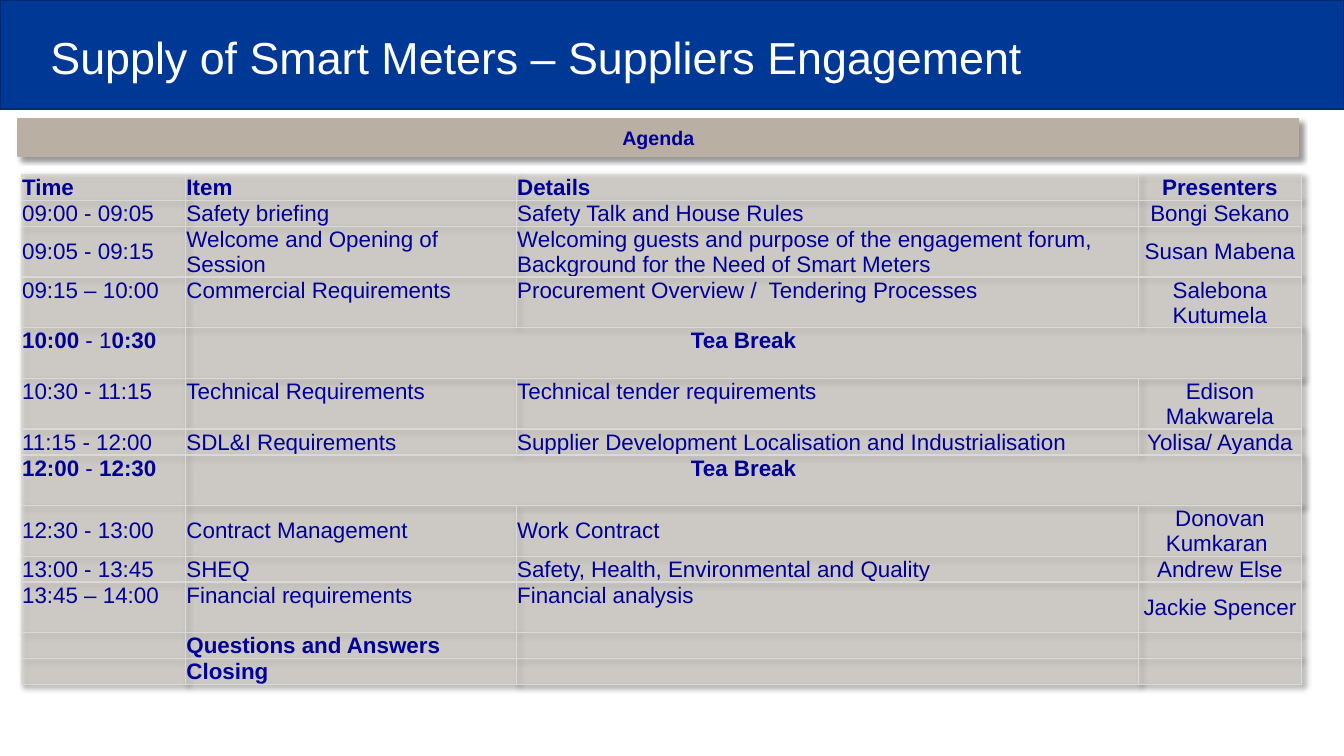
from lxml import etree
from pptx import Presentation
from pptx.dml.color import RGBColor
from pptx.enum.shapes import MSO_SHAPE
from pptx.enum.text import MSO_ANCHOR, PP_ALIGN
from pptx.oxml.ns import qn
from pptx.util import Inches, Pt

LEFT, CENTER = PP_ALIGN.LEFT, PP_ALIGN.CENTER
TOP, MIDDLE, BOTTOM = MSO_ANCHOR.TOP, MSO_ANCHOR.MIDDLE, MSO_ANCHOR.BOTTOM
RECTANGLE = MSO_SHAPE.RECTANGLE

FONT = "Arial"
NAVY, WHITE, SAND, GRID = "000099", "FFFFFF", "D4CEC6", "D9D9D9"
TITLE = "Supply of Smart Meters – Suppliers Engagement"
COLUMN_WIDTHS = [1.63, 3.28, 6.17, 1.62]
LINE_HEIGHT = 0.25

# Each row: lines of height, anchor of the first three columns, cell texts (*bold*)
AGENDA = [
    (1, BOTTOM, ["*Time*", "*Item*", "*Details*", "*Presenters*"]),
    (1, MIDDLE, ["09:00 - 09:05", "Safety briefing", "Safety Talk and House Rules", "Bongi Sekano"]),
    (2, MIDDLE, ["09:05 - 09:15", "Welcome and Opening of Session",
                 "Welcoming guests and purpose of the engagement forum, "
                 "Background for the Need of Smart Meters", "Susan Mabena"]),
    (2, TOP, ["09:15 – 10:00", "Commercial Requirements",
              "Procurement Overview /  Tendering Processes", "Salebona Kutumela"]),
    (2, TOP, ["*10:00* - 1*0:30*", "*Tea Break*"]),
    (2, TOP, ["10:30 - 11:15", "Technical Requirements", "Technical tender requirements", "Edison Makwarela"]),
    (1, MIDDLE, ["11:15 - 12:00", "SDL&I Requirements",
                 "Supplier Development Localisation and Industrialisation", "Yolisa/ Ayanda"]),
    (2, TOP, ["*12:00* - *12:30*", "*Tea Break*"]),
    (2, MIDDLE, ["12:30 - 13:00", "Contract Management", "Work Contract", "Donovan Kumkaran "]),
    (1, MIDDLE, ["13:00 - 13:45", "SHEQ", "Safety, Health, Environmental and Quality", "Andrew Else"]),
    (2, TOP, ["13:45 – 14:00", "Financial requirements", "Financial analysis", "Jackie Spencer"]),
    (1, MIDDLE, ["", "*Questions and Answers*", "", ""]),
    (1, MIDDLE, ["", "*Closing*", "", ""]),
]


def rgb(color):
    """Turn a hex string into a colour."""
    return RGBColor.from_string(color)


def style(paragraph, size, color, align):
    """Set the font and alignment of a paragraph."""
    paragraph.alignment = align
    paragraph.font.name = FONT
    paragraph.font.size = Pt(size)
    paragraph.font.color.rgb = rgb(color)


def color_element(parent, color, alpha=100):
    """Add a colour with opacity in percent."""
    element = etree.SubElement(parent, qn("a:srgbClr"), val=color)
    etree.SubElement(element, qn("a:alpha"), val=str(alpha * 1000))


def soft_shadow():
    """Make an effect list with a shadow to the lower right."""
    effects = etree.Element(qn("a:effectLst"))
    shadow = etree.SubElement(effects, qn("a:outerShdw"), blurRad=str(Pt(4)), dist=str(Pt(3)),
                              dir="2700000", algn="tl", rotWithShape="0")
    color_element(shadow, "000000", 40)
    return effects


def add_bar(slide, box, fill, line):
    """Add a filled rectangle."""
    bar = slide.shapes.add_shape(RECTANGLE, *map(Inches, box))
    bar.shadow.inherit = False
    bar.fill.solid()
    bar.fill.fore_color.rgb = rgb(fill)
    bar.line.color.rgb = rgb(line)
    bar.line.width = Pt(1)
    return bar


def format_cell(cell):
    """Give a cell its borders, translucent fill and margins."""
    properties = cell._tc.get_or_add_tcPr()
    for side in ("lnL", "lnR", "lnT", "lnB"):
        border = etree.SubElement(properties, qn(f"a:{side}"), w=str(Pt(1)))
        color_element(etree.SubElement(border, qn("a:solidFill")), GRID)
    color_element(etree.SubElement(properties, qn("a:solidFill")), SAND, 60)
    cell.margin_left = cell.margin_top = cell.margin_right = Inches(0.01)
    cell.margin_bottom = 0


def write_cell(cell, text, align):
    """Write text whose starred parts are bold."""
    paragraph = cell.text_frame.paragraphs[0]
    style(paragraph, 16, NAVY, align)
    for index, part in enumerate(text.split("*")):
        if part:
            run = paragraph.add_run()
            run.text = part
            run.font.bold = index % 2 == 1
    if not text:
        paragraph._p.get_or_add_endParaRPr().set("sz", "1600")


def add_agenda(slide):
    """Add the agenda table."""
    height = LINE_HEIGHT * sum(lines for lines, _, _ in AGENDA)
    table = slide.shapes.add_table(len(AGENDA), len(COLUMN_WIDTHS), Inches(0.21), Inches(1.73),
                                   Inches(sum(COLUMN_WIDTHS)), Inches(height)).table
    table.first_row = table.horz_banding = False
    table._tbl.tblPr.insert(0, soft_shadow())
    for column, width in zip(table.columns, COLUMN_WIDTHS):
        column.width = Inches(width)
    last = len(COLUMN_WIDTHS) - 1
    for r, (lines, anchor, texts) in enumerate(AGENDA):
        table.rows[r].height = Inches(LINE_HEIGHT * lines)
        is_break = len(texts) == 2
        for c in range(last + 1):
            cell = table.cell(r, c)
            format_cell(cell)
            cell.vertical_anchor = MIDDLE if c == last and r else anchor
            centered = c == last or (is_break and c == 1)
            write_cell(cell, texts[c] if c < len(texts) else "", CENTER if centered else LEFT)
        if is_break:
            table.cell(r, 1).merge(table.cell(r, last))


def main():
    """Build the agenda slide."""
    deck = Presentation()
    deck.slide_width, deck.slide_height = Inches(13.33), Inches(7.5)
    slide = deck.slides.add_slide(deck.slide_layouts[5])

    title = slide.shapes.title
    title.left, title.top, title.width, title.height = map(Inches, (0.4, 0.23, 10.4, 0.73))
    title.text_frame.text = TITLE
    title.text_frame.vertical_anchor = MIDDLE
    heading = title.text_frame.paragraphs[0]
    heading.line_spacing = 0.9
    style(heading, 32, WHITE, LEFT)
    banner = add_bar(slide, (0, 0, 13.33, 1.08), "003896", "00296F")
    title._element.addprevious(banner._element)

    add_agenda(slide)

    agenda_bar = add_bar(slide, (0.18, 1.18, 12.7, 0.37), "B9B0A3", "B9B0A3")
    bar_properties = agenda_bar._element.spPr
    bar_properties.replace(bar_properties.find(qn("a:effectLst")), soft_shadow())
    agenda_bar.text_frame.text = "Agenda"
    agenda_bar.text_frame.vertical_anchor = MIDDLE
    label = agenda_bar.text_frame.paragraphs[0]
    style(label, 14, NAVY, CENTER)
    label.font.bold = True

    deck.save("out.pptx")


if __name__ == "__main__":
    main()
